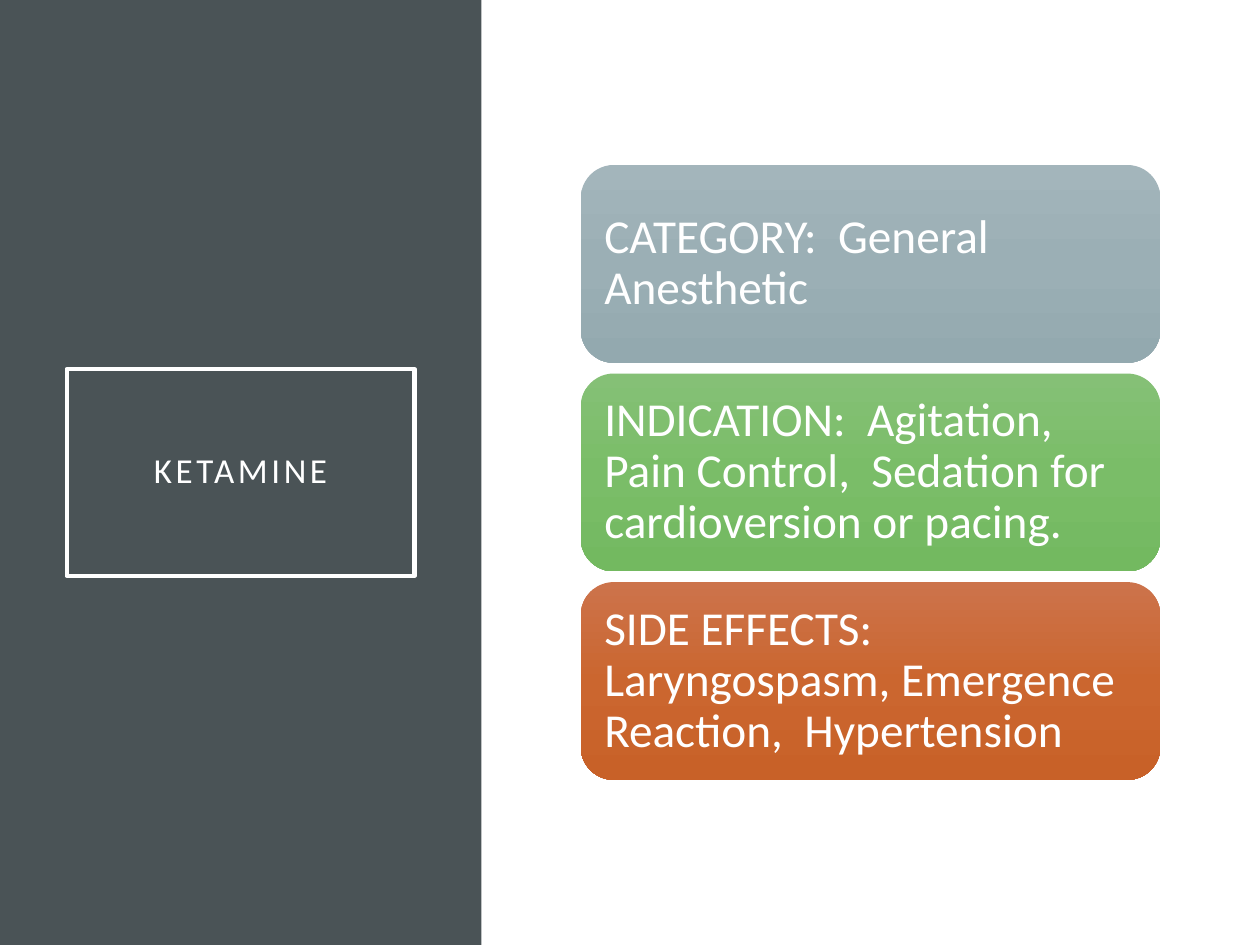
from copy import deepcopy
from dataclasses import dataclass

from pptx import Presentation
from pptx.dml.color import RGBColor
from pptx.enum.shapes import MSO_SHAPE
from pptx.enum.text import MSO_ANCHOR, PP_ALIGN
from pptx.oxml.ns import qn
from pptx.util import Inches, Pt

RECT = MSO_SHAPE.RECTANGLE
ROUNDED = MSO_SHAPE.ROUNDED_RECTANGLE
MIDDLE = MSO_ANCHOR.MIDDLE
LEFT, CENTER = PP_ALIGN.LEFT, PP_ALIGN.CENTER


@dataclass(frozen=True)
class Theme:
    font: str = "Calibri"
    panel: str = "4A5356"
    white: str = "FFFFFF"
    gray: tuple = ("A3B5BB", "9BAFB5", "93A9AF")
    green: tuple = ("85C076", "7ABD68", "73B960")
    orange: tuple = ("CC734B", "CB662F", "C86128")
    title_size: int = 20
    card_size: int = 27


THEME = Theme()

CARDS = [
    ("CATEGORY:  General Anesthetic", THEME.gray),
    ("INDICATION:  Agitation,  Pain Control,  Sedation for "
     "cardioversion or pacing.", THEME.green),
    ("SIDE EFFECTS:  Laryngospasm, Emergence Reaction,  Hypertension",
     THEME.orange),
]
CARD_TOP, CARD_HEIGHT, CARD_PITCH = 1.31, 1.57, 1.655


def add_box(s, kind, x, y, w, h):
    sp = s.shapes.add_shape(kind, Inches(x), Inches(y), Inches(w), Inches(h))
    sp.shadow.inherit = False
    sp.fill.background()
    sp.line.fill.background()
    return sp


def set_text(sp, text, size, align, inset):
    tf = sp.text_frame
    tf.text = text
    tf.word_wrap = True
    tf.vertical_anchor = MIDDLE
    tf.margin_left = tf.margin_right = Inches(inset)
    tf.margin_top = tf.margin_bottom = Inches(inset)
    p = tf.paragraphs[0]
    p.alignment = align
    p.line_spacing = 0.9
    r = p.runs[0]
    r.font.name = THEME.font
    r.font.size = Pt(size)
    r.font.color.rgb = RGBColor.from_string(THEME.white)
    return r


def set_gradient(sp, colors):
    """Fill from top to bottom with three evenly spaced colours."""
    fill = sp.fill
    fill.gradient()
    fill.gradient_angle = 270
    stops = sp._element.spPr.find(qn("a:gradFill")).find(qn("a:gsLst"))
    stops.insert(1, deepcopy(stops[0]))
    for i, (stop, color) in enumerate(zip(fill.gradient_stops, colors)):
        stop.position = i / 2
        stop.color.rgb = RGBColor.from_string(color)


def add_panel(s):
    sp = add_box(s, RECT, 0, 0, 3.82, 7.5)
    sp.fill.solid()
    sp.fill.fore_color.rgb = RGBColor.from_string(THEME.panel)


def add_title(s, text):
    sp = add_box(s, RECT, 0.53, 2.93, 2.76, 1.64)
    sp.line.color.rgb = RGBColor.from_string(THEME.white)
    sp.line.width = Pt(2.5)
    r = set_text(sp, text, THEME.title_size, CENTER, 0.2)
    r.font._element.set("spc", "200")  # letter spacing of 2 pt


def add_card(s, y, text, colors):
    sp = add_box(s, ROUNDED, 4.61, y, 4.6, CARD_HEIGHT)
    set_gradient(sp, colors)
    set_text(sp, text, THEME.card_size, LEFT, 0.11)


def main():
    prs = Presentation()
    prs.slide_width, prs.slide_height = Inches(10), Inches(7.5)
    s = prs.slides.add_slide(prs.slide_layouts[6])

    # Left panel with the drug name
    add_panel(s)
    add_title(s, "KETAMINE")

    # Stack of fact cards
    for i, (text, colors) in enumerate(CARDS):
        add_card(s, CARD_TOP + i * CARD_PITCH, text, colors)

    prs.save("out.pptx")


if __name__ == "__main__":
    main()
